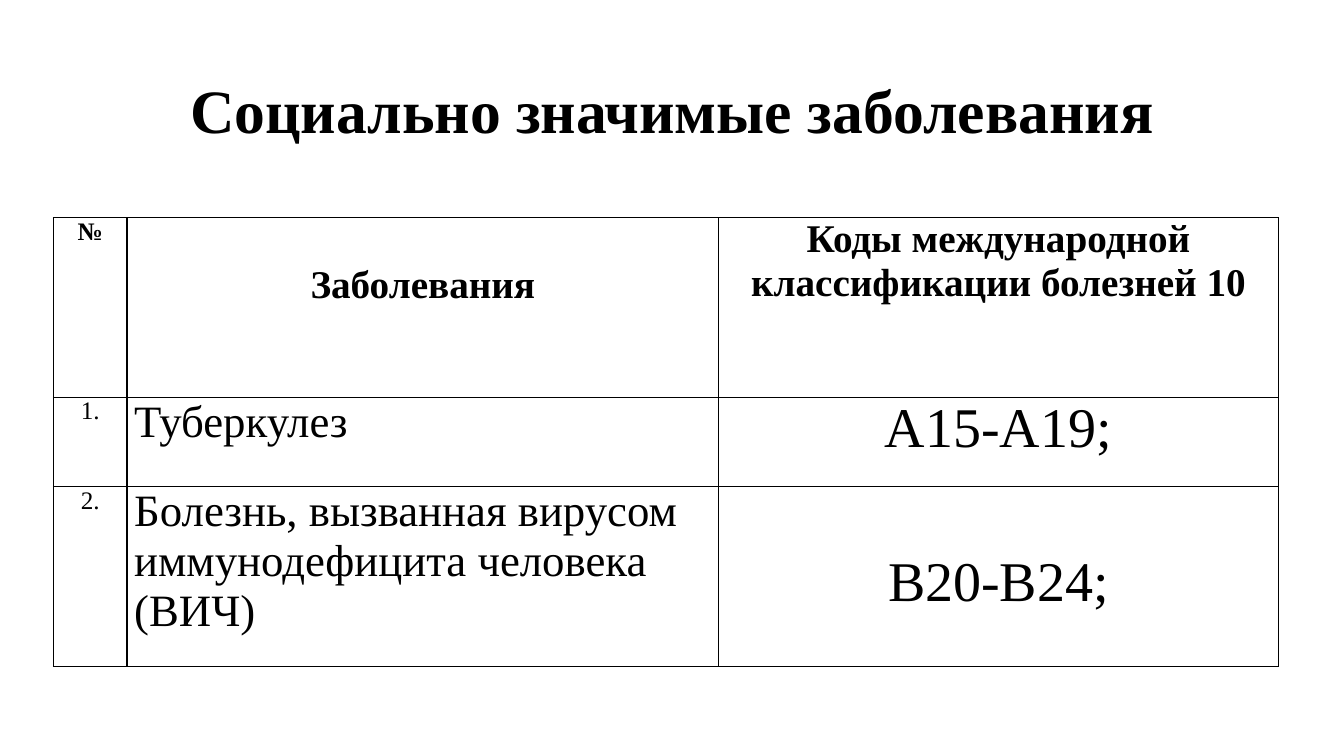
from lxml import etree
from pptx import Presentation
from pptx import util as u
from pptx.dml import color
from pptx.enum import text
from pptx.oxml import ns

FONT = "Times New Roman"
BLACK, WHITE = "000000", "FFFFFF"
LEFT, CENTER = text.PP_ALIGN.LEFT, text.PP_ALIGN.CENTER

TITLE = "Социально значимые заболевания"
HEADERS = ["№", "Заболевания", "Коды международной классификации болезней 10"]
DISEASES = [
    ["1.", "Туберкулез", "A15-A19;"],
    ["2.", "Болезнь, вызванная вирусом иммунодефицита человека (ВИЧ)", "B20-B24;"],
]
HEADER_SIZES = [18, 28, 28]
BODY_SIZES = [18, 32, 40]
BODY_ALIGNMENTS = [CENTER, LEFT, CENTER]
TOP_GAPS = {(0, 1): 1.14, (2, 2): 1.62}

SLIDE_SIZE = (33.87, 19.05)
TITLE_BOX = (2.34, 1.02, 29.21, 3.68)
TABLE_LEFT, TABLE_TOP = 1.35, 5.49
COLUMN_WIDTHS = [1.85, 14.91, 14.1]
ROW_HEIGHTS = [4.52, 2.26, 4.52]
SIDE_MARGIN = 0.18


def rgb(value):
    return color.RGBColor.from_string(value)


def apply(target, values):
    for name, value in values.items():
        setattr(target, name, value)


def write(frame, content, size, bold, alignment, spacing=None):
    paragraph = frame.paragraphs[0]
    apply(paragraph, {"alignment": alignment, "line_spacing": spacing})
    run = paragraph.add_run()
    run.text = content
    apply(run.font, {"name": FONT, "size": u.Pt(size), "bold": bold})
    run.font.color.rgb = rgb(BLACK)


def add_borders(cell):
    properties = cell._tc.get_or_add_tcPr()
    for side in ("lnL", "lnR", "lnT", "lnB"):
        line = etree.SubElement(properties, ns.qn("a:" + side), w=str(u.Pt(1)))
        fill = etree.SubElement(line, ns.qn("a:solidFill"))
        etree.SubElement(fill, ns.qn("a:srgbClr"), val=BLACK)


def add_title(slide):
    frame = slide.shapes.add_textbox(*map(u.Cm, TITLE_BOX)).text_frame
    apply(frame, {"word_wrap": True, "vertical_anchor": text.MSO_ANCHOR.MIDDLE})
    write(frame, TITLE, 44, True, CENTER, 0.9)


def add_disease_table(slide):
    rows = [HEADERS] + DISEASES
    table = slide.shapes.add_table(
        len(rows), len(HEADERS), u.Cm(TABLE_LEFT), u.Cm(TABLE_TOP),
        u.Cm(sum(COLUMN_WIDTHS)), u.Cm(sum(ROW_HEIGHTS))).table
    apply(table, {"first_row": False, "horz_banding": False})
    for column, width in zip(table.columns, COLUMN_WIDTHS):
        column.width = u.Cm(width)
    for row, height in zip(table.rows, ROW_HEIGHTS):
        row.height = u.Cm(height)
    for i, row in enumerate(rows):
        header = i == 0
        sizes = HEADER_SIZES if header else BODY_SIZES
        for j, content in enumerate(row):
            cell = table.cell(i, j)
            apply(cell, {
                "margin_left": u.Cm(SIDE_MARGIN),
                "margin_right": u.Cm(SIDE_MARGIN),
                "margin_top": u.Cm(TOP_GAPS.get((i, j), 0)),
                "margin_bottom": 0,
            })
            add_borders(cell)
            cell.fill.solid()
            cell.fill.fore_color.rgb = rgb(WHITE)
            alignment = CENTER if header else BODY_ALIGNMENTS[j]
            write(cell.text_frame, content, sizes[j], header, alignment)


def main():
    presentation = Presentation()
    width, height = map(u.Cm, SLIDE_SIZE)
    apply(presentation, {"slide_width": width, "slide_height": height})
    slide = presentation.slides.add_slide(presentation.slide_layouts[6])
    add_title(slide)
    add_disease_table(slide)
    presentation.save("out.pptx")


if __name__ == "__main__":
    main()
